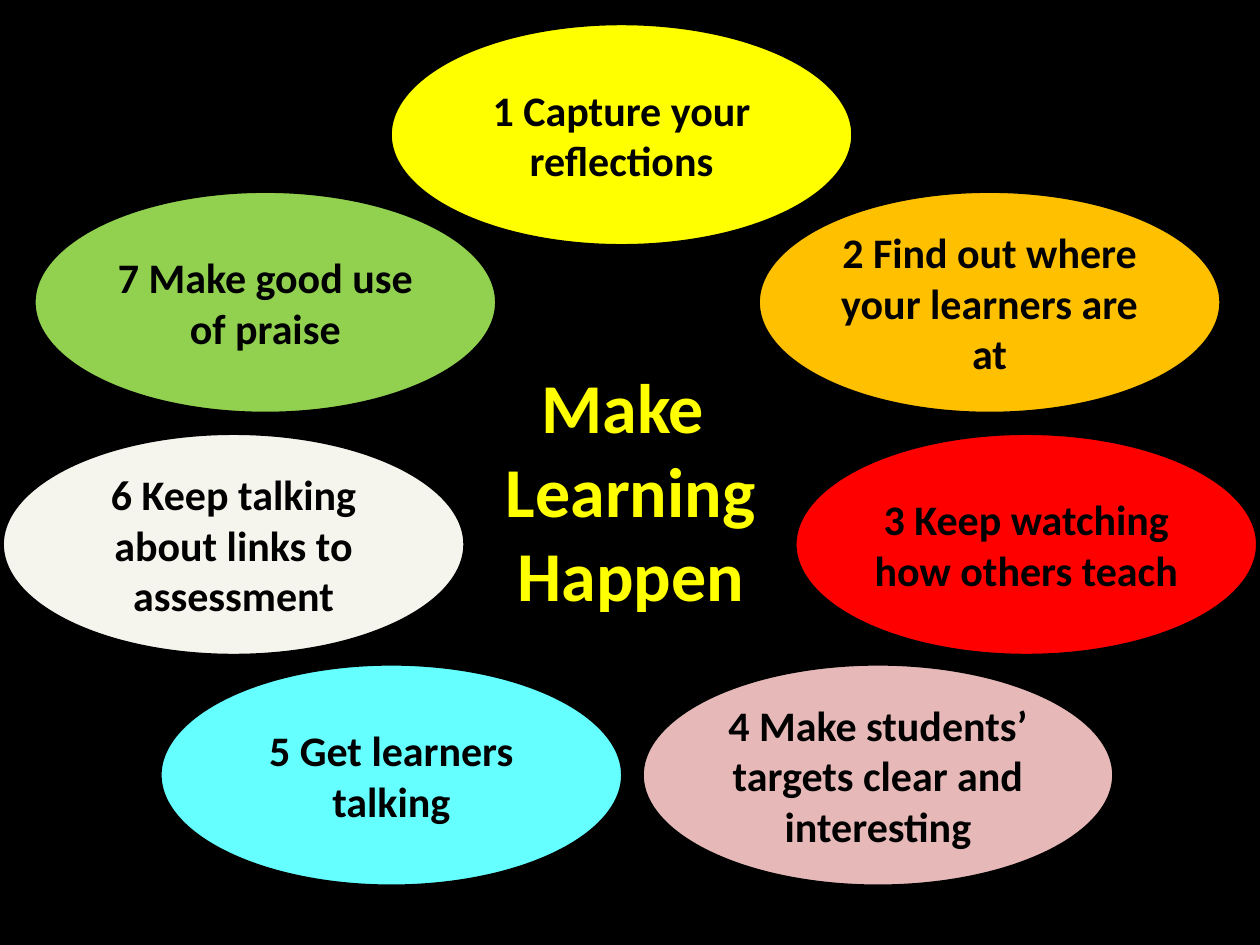
from dataclasses import dataclass

import pptx
import pptx.dml.color
import pptx.enum.shapes
import pptx.enum.text
import pptx.util
from pptx.util import Cm


@dataclass(frozen=True)
class Theme:
    font: str = "Calibri"
    background: str = "000000"
    outline: str = "000000"
    outline_width: float = 4.5
    title_color: str = "FFFF00"
    title_size: int = 40
    step_color: str = "000000"
    step_size: int = 24
    step_fills: tuple = ("FFFF00", "FFC000", "FF0000", "E6B9B8",
                         "66FFFF", "F5F4ED", "92D050")


THEME = Theme()

STEP_WIDTH, STEP_HEIGHT = 9.42, 4.57
TOP_ROW, UPPER_ROW, MIDDLE_ROW, LOWER_ROW = 0.43, 3.81, 8.69, 13.34

# Clockwise from the top: text, left, top, width (cm)
STEPS = [
    ("1 Capture your reflections", 7.82, TOP_ROW, STEP_WIDTH),
    ("2 Find out where your learners are at", 15.24, UPPER_ROW, STEP_WIDTH),
    ("3 Keep watching how others teach", 15.98, MIDDLE_ROW, STEP_WIDTH),
    ("4 Make students’ targets clear and interesting", 12.9, LOWER_ROW, 9.6),
    ("5 Get learners talking", 3.18, LOWER_ROW, STEP_WIDTH),
    ("6 Keep talking about links to assessment", 0, MIDDLE_ROW, STEP_WIDTH),
    ("7 Make good use of praise", 0.64, UPPER_ROW, STEP_WIDTH),
]


def rgb(value):
    return pptx.dml.color.RGBColor.from_string(value)


def add_ellipse(page, left, top, width, height, fill=None):
    ellipse = page.shapes.add_shape(
        pptx.enum.shapes.MSO_SHAPE.OVAL,
        Cm(left), Cm(top), Cm(width), Cm(height))
    ellipse.shadow.inherit = False
    if fill:
        ellipse.fill.solid()
        ellipse.fill.fore_color.rgb = rgb(fill)
    else:
        ellipse.fill.background()
    ellipse.line.color.rgb = rgb(THEME.outline)
    ellipse.line.width = pptx.util.Pt(THEME.outline_width)
    return ellipse


def write_centred(shape, lines, size, color):
    """Fill the shape with bold centred text, one paragraph per line."""
    frame = shape.text_frame
    frame.word_wrap = True
    frame.vertical_anchor = pptx.enum.text.MSO_ANCHOR.MIDDLE
    frame.text = "\n".join(lines)
    for para in frame.paragraphs:
        para.alignment = pptx.enum.text.PP_ALIGN.CENTER
        para.font.name = THEME.font
        para.font.size = pptx.util.Pt(size)
        para.font.bold = True
        para.font.color.rgb = rgb(color)


def add_title(page):
    ellipse = add_ellipse(page, 8.51, 4.01, 8.41, 11.71)
    write_centred(ellipse, ["Make ", "Learning", "Happen"],
                  THEME.title_size, THEME.title_color)


def add_step(page, text, left, top, width, fill):
    ellipse = add_ellipse(page, left, top, width, STEP_HEIGHT, fill)
    frame = ellipse.text_frame
    frame.margin_left = frame.margin_right = 0
    frame.margin_top = frame.margin_bottom = 0
    write_centred(ellipse, [text], THEME.step_size, THEME.step_color)


def main():
    deck = pptx.Presentation()
    deck.slide_width, deck.slide_height = Cm(25.4), Cm(19.05)
    page = deck.slides.add_slide(deck.slide_layouts[6])
    page.background.fill.solid()
    page.background.fill.fore_color.rgb = rgb(THEME.background)
    add_title(page)
    for step, fill in zip(STEPS, THEME.step_fills):
        add_step(page, *step, fill)
    deck.save("out.pptx")


if __name__ == "__main__":
    main()
